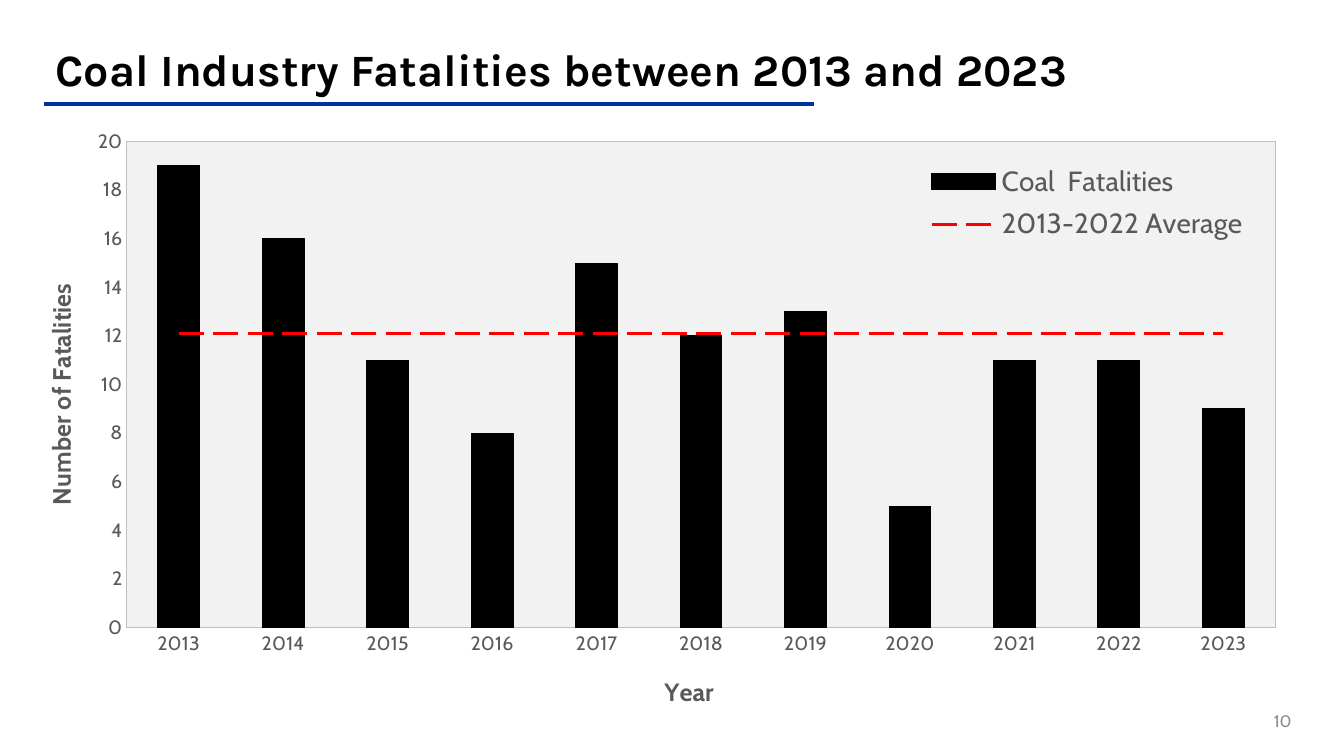
from copy import deepcopy
from dataclasses import dataclass

from lxml import etree
from pptx import Presentation
from pptx import util as u
from pptx.chart import data
from pptx.dml.color import RGBColor
from pptx.enum import chart as ch, dml, shapes, text
from pptx.oxml import ns, parse_xml

BLACK = RGBColor(0x00, 0x00, 0x00)
BLUE = RGBColor(0x00, 0x33, 0xA0)
RED = RGBColor(0xFF, 0x00, 0x00)
SLATE = RGBColor(0x59, 0x59, 0x59)
GREY = RGBColor(0x8C, 0x8C, 0x8C)
SILVER = RGBColor(0xBF, 0xBF, 0xBF)
PALE = RGBColor(0xF2, 0xF2, 0xF2)
WIDE, HIGH = u.Inches(13.33), u.Inches(7.5)

YEARS = [str(year) for year in range(2013, 2024)]
DEATHS = (19, 16, 11, 8, 15, 12, 13, 5, 11, 11, 9)
MEAN = 12.1


@dataclass(frozen=True)
class Box:
    """Position and size as percentages of the parent."""
    x: float
    y: float
    w: float = 0
    h: float = 0

    def frame(self) -> tuple[int, int, int, int]:
        return (int(WIDE * self.x / 100), int(HIGH * self.y / 100),
                int(WIDE * self.w / 100), int(HIGH * self.h / 100))


@dataclass(frozen=True)
class Scale:
    """One chart axis with its title."""
    tag: str
    label: str
    spot: Box


TITLE = Box(3.38, 5.33, 93.25, 8.4)
RULE = Box(3.3, 13.73, 57.24)
PAGE = Box(92.35, 92.67, 4.5, 5.33)
CHART = Box(1.28, 16.4, 95.65, 78.27)
PLOT = Box(8.5, 3, 89.4, 83.2)
LEGEND = Box(70.5, 5.5, 25.5, 16)
YEAR = Scale("c:catAx", "Year", Box(50, 93.5))
COUNT = Scale("c:valAx", "Number of Fatalities", Box(1.7, 27))


def style(font, size: float, color: RGBColor, bold: bool = False,
          face: str = "Cabin") -> None:
    font.name, font.size, font.bold = face, u.Pt(size), bold
    font.color.rgb = color


def place(part, box: Box, index: int, inner: bool = False) -> None:
    """Give a chart part a manual layout."""
    for old in part.findall(ns.qn("c:layout")):
        part.remove(old)
    layout = parse_xml(f'<c:layout {ns.nsdecls("c")}><c:manualLayout/></c:layout>')
    pairs = [("layoutTarget", "inner")] if inner else []
    pairs += [("xMode", "edge"), ("yMode", "edge")]
    pairs += [(key, str(round(getattr(box, key) / 100, 4)))
              for key in "xywh" if getattr(box, key)]
    for key, value in pairs:
        etree.SubElement(layout[0], ns.qn(f"c:{key}")).set("val", value)
    part.insert(index, layout)


def split(area) -> None:
    """Move the second bar series to a line plot on the same axes."""
    bars = area.find(ns.qn("c:barChart"))
    ser = bars.findall(ns.qn("c:ser"))[1]
    for flag in ser.findall(ns.qn("c:invertIfNegative")):
        ser.remove(flag)
    plot = parse_xml(f'<c:lineChart {ns.nsdecls("c")}><c:grouping val="standard"/>'
                     '<c:varyColors val="0"/></c:lineChart>')
    plot.append(ser)
    etree.SubElement(plot, ns.qn("c:marker")).set("val", "1")
    for axis in bars.findall(ns.qn("c:axId")):
        plot.append(deepcopy(axis))
    bars.addnext(plot)


def scale(axis, area, item: Scale) -> None:
    """Format an axis and set its title."""
    axis.has_major_gridlines = False
    axis.major_tick_mark = axis.minor_tick_mark = ch.XL_TICK_MARK.NONE
    style(axis.tick_labels.font, 14, SLATE)
    axis.format.line.color.rgb = SILVER
    axis.format.line.width = u.Pt(0.75)
    para = axis.axis_title.text_frame.paragraphs[0]
    para.text = item.label
    style(para.runs[0].font, 18, SLATE, True)
    place(area.find(ns.qn(item.tag)).find(ns.qn("c:title")), item.spot, 1)


def graph(slide) -> None:
    table = data.CategoryChartData()
    table.categories = YEARS
    table.add_series("Coal  Fatalities", DEATHS)
    table.add_series("2013-2022 Average", [MEAN] * len(YEARS))
    chart = slide.shapes.add_chart(ch.XL_CHART_TYPE.COLUMN_CLUSTERED,
                                   *CHART.frame(), table).chart
    style(chart.font, 10, BLACK)
    chart.has_title = False
    area = chart.element.find(".//" + ns.qn("c:plotArea"))

    # Axes
    chart.value_axis.minimum_scale, chart.value_axis.maximum_scale = 0, 20
    chart.value_axis.major_unit = 2
    scale(chart.category_axis, area, YEAR)
    scale(chart.value_axis, area, COUNT)

    # Plot area
    split(area)
    place(area, PLOT, 0, True)
    area.append(parse_xml(
        f'<c:spPr {ns.nsdecls("c", "a")}>'
        f'<a:solidFill><a:srgbClr val="{PALE}"/></a:solidFill>'
        f'<a:ln w="9525"><a:solidFill><a:srgbClr val="{SILVER}"/></a:solidFill></a:ln>'
        '</c:spPr>'))

    # Columns and average line
    bars, line = chart.plots
    bars.gap_width, bars.vary_by_categories = 150, False
    coal, mean = bars.series[0], line.series[0]
    coal.format.fill.solid()
    coal.format.fill.fore_color.rgb = BLACK
    coal.format.line.color.rgb = BLACK
    coal.format.line.width = u.Pt(0.75)
    mean.smooth = False
    mean.marker.style = ch.XL_MARKER_STYLE.NONE
    mean.format.line.color.rgb = RED
    mean.format.line.width = u.Pt(2.25)
    mean.format.line.dash_style = dml.MSO_LINE.LONG_DASH

    # Legend
    chart.has_legend = True
    chart.legend.position = ch.XL_LEGEND_POSITION.RIGHT
    chart.legend.include_in_layout = True
    style(chart.legend.font, 20, SLATE)
    place(chart.element.find(".//" + ns.qn("c:legend")), LEGEND, 1)


def head(slide) -> None:
    # Blue rule
    x, y, w, _ = RULE.frame()
    rule = slide.shapes.add_connector(shapes.MSO_CONNECTOR.STRAIGHT, x, y, x + w, y)
    rule.line.color.rgb, rule.line.width = BLUE, u.Pt(3)
    bare = rule.element.find(ns.qn("p:spPr"))
    etree.SubElement(bare, ns.qn("a:effectLst"))

    # Title
    title = slide.shapes.title
    title.left, title.top, title.width, title.height = TITLE.frame()
    frame = title.text_frame
    frame.text = "Coal Industry Fatalities between 2013 and 2023"
    frame.vertical_anchor = text.MSO_ANCHOR.MIDDLE
    para = frame.paragraphs[0]
    para.alignment, para.line_spacing = text.PP_ALIGN.LEFT, 0.9
    style(para.runs[0].font, 32, BLACK, True, "Karla")


def page(slide) -> None:
    # Slide number
    frame = slide.shapes.add_textbox(*PAGE.frame()).text_frame
    frame.word_wrap = True
    frame.vertical_anchor = text.MSO_ANCHOR.MIDDLE
    frame.text = "10"
    para = frame.paragraphs[0]
    para.alignment = text.PP_ALIGN.RIGHT
    style(para.runs[0].font, 12, GREY)


def main() -> None:
    deck = Presentation()
    deck.slide_width, deck.slide_height = WIDE, HIGH
    slide = deck.slides.add_slide(deck.slide_layouts[5])
    head(slide)
    page(slide)
    graph(slide)
    deck.save("out.pptx")


if __name__ == "__main__":
    main()
